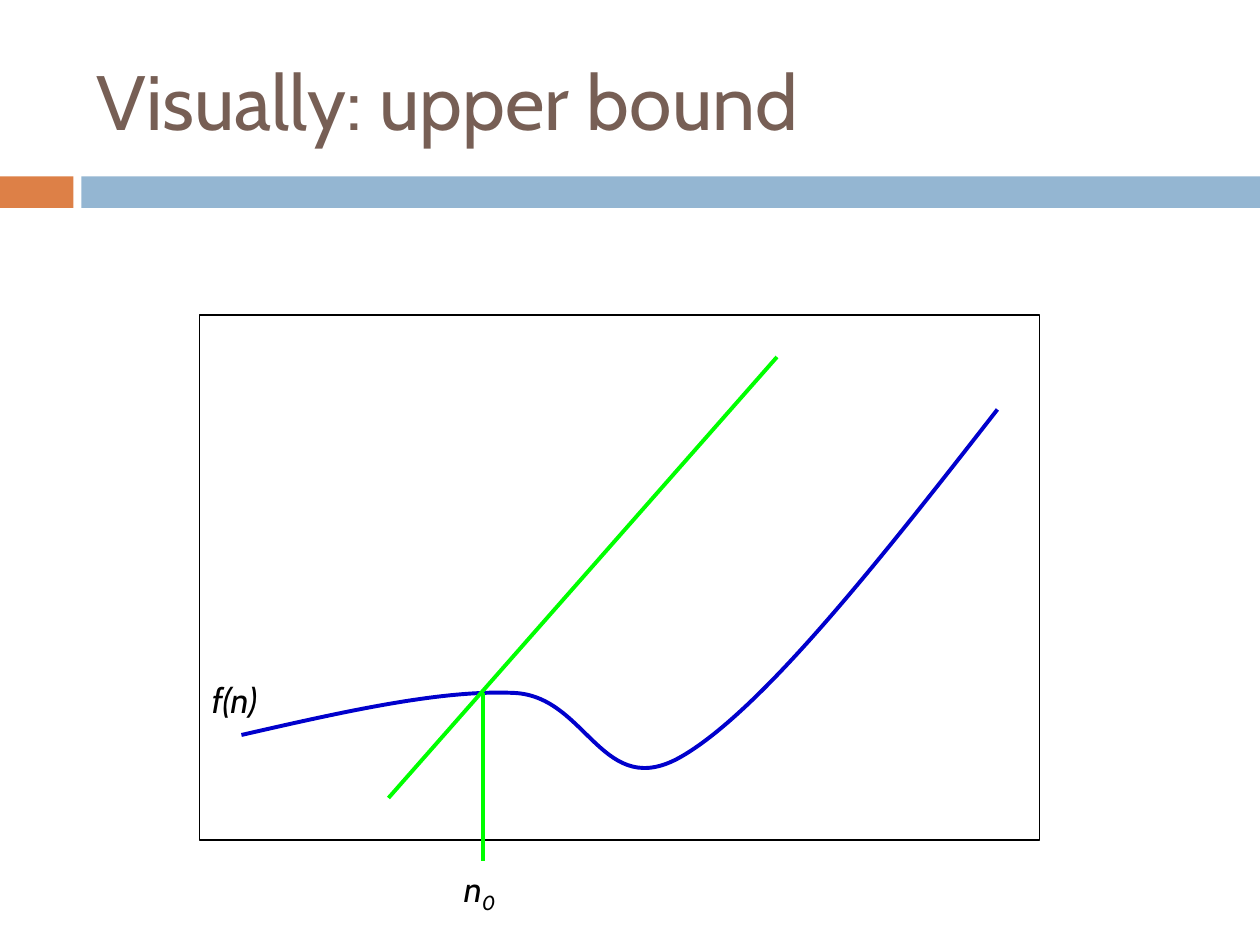
from lxml.etree import SubElement
from pptx import Presentation
from pptx.dml.color import RGBColor
from pptx.enum.shapes import MSO_CONNECTOR, MSO_SHAPE
from pptx.enum.text import MSO_ANCHOR, MSO_AUTO_SIZE, PP_ALIGN
from pptx.oxml.ns import qn
from pptx.util import Pt

BROWN = RGBColor(0x77, 0x5F, 0x55)
ORANGE = RGBColor(0xDD, 0x80, 0x47)
LIGHT_BLUE = RGBColor(0x94, 0xB6, 0xD2)
BLUE = RGBColor(0x00, 0x00, 0xCC)
GREEN = RGBColor(0x00, 0xFF, 0x00)
BLACK = RGBColor(0x00, 0x00, 0x00)
FONT = "Cabin"

# Content: all lengths in points
TITLE = "Visually: upper bound"
TITLE_BOX = (48, 18, 642, 78)
BARS = [((0, 100.8, 42, 18), ORANGE), ((46.5, 100.8, 673.5, 18), LIGHT_BLUE)]
PLOT_FRAME = (114, 180, 480, 300)
# Start point, then two control points and an end point for each segment
CURVE = [
    (138, 420),
    (195, 407), (252, 394), (294, 396),
    (336, 398), (344, 459), (390, 432),
    (436, 405), (503, 320), (570, 234),
]
BOUND_LINES = [(222, 456, 444, 204), (276, 396, 276, 492)]
# Box, text, subscript
LABELS = [((258, 492, 42, 31), "n", "0"), ((114, 384, 54, 31), "f(n)", "")]


def points(values):
    return [Pt(value) for value in values]


def style_run(run, size, color, italic=False):
    run.font.name = FONT
    run.font.size = Pt(size)
    run.font.color.rgb = color
    run.font.italic = italic


def add_rectangle(slide, box):
    shape = slide.shapes.add_shape(MSO_SHAPE.RECTANGLE, *points(box))
    shape.shadow.inherit = False
    return shape


def add_curve(slide, nodes):
    builder = slide.shapes.build_freeform(*points(nodes[0]), scale=1.0)
    builder.add_line_segments([points(node) for node in nodes[1:]], close=False)
    shape = builder.convert_to_shape()
    shape.shadow.inherit = False
    shape.fill.background()
    shape.line.color.rgb = BLUE
    shape.line.width = Pt(2.25)
    # Turn each three straight steps into one cubic Bézier segment
    steps = list(shape.element.iter(qn("a:lnTo")))
    outline = steps[0].getparent()
    for start in range(0, len(steps), 3):
        segment = SubElement(outline, qn("a:cubicBezTo"))
        for step in steps[start:start + 3]:
            segment.append(step[0])
            outline.remove(step)


def add_bound_line(slide, ends):
    line = slide.shapes.add_connector(MSO_CONNECTOR.STRAIGHT, *points(ends))
    line.line.color.rgb = GREEN
    line.line.width = Pt(2.25)
    SubElement(line.element.spPr, qn("a:effectLst"))


def add_label(slide, box, text, subscript):
    text_frame = slide.shapes.add_textbox(*points(box)).text_frame
    text_frame.word_wrap = True
    text_frame.auto_size = MSO_AUTO_SIZE.SHAPE_TO_FIT_TEXT
    paragraph = text_frame.paragraphs[0]
    paragraph.text = text
    if subscript:
        run = paragraph.add_run()
        run.text = subscript
        run._r.get_or_add_rPr().set("baseline", "-25000")
    for run in paragraph.runs:
        style_run(run, 20, BLACK, italic=True)


def main():
    presentation = Presentation()
    presentation.slide_width, presentation.slide_height = Pt(720), Pt(540)
    slide = presentation.slides.add_slide(presentation.slide_layouts[5])

    # Title
    title = slide.shapes.title
    title.left, title.top, title.width, title.height = points(TITLE_BOX)
    title.text_frame.text = TITLE
    title.text_frame.auto_size = MSO_AUTO_SIZE.NONE
    title.text_frame.vertical_anchor = MSO_ANCHOR.MIDDLE
    paragraph = title.text_frame.paragraphs[0]
    paragraph.alignment = PP_ALIGN.LEFT
    style_run(paragraph.runs[0], 44, BROWN)

    # Bars under the title
    for box, color in BARS:
        bar = add_rectangle(slide, box)
        bar.fill.solid()
        bar.fill.fore_color.rgb = color
        bar.line.fill.background()

    # Plot
    frame = add_rectangle(slide, PLOT_FRAME)
    frame.fill.background()
    frame.line.color.rgb = BLACK
    frame.line.width = Pt(0.75)
    add_curve(slide, CURVE)
    for ends in BOUND_LINES:
        add_bound_line(slide, ends)
    for label in LABELS:
        add_label(slide, *label)

    presentation.save("out.pptx")


if __name__ == "__main__":
    main()
